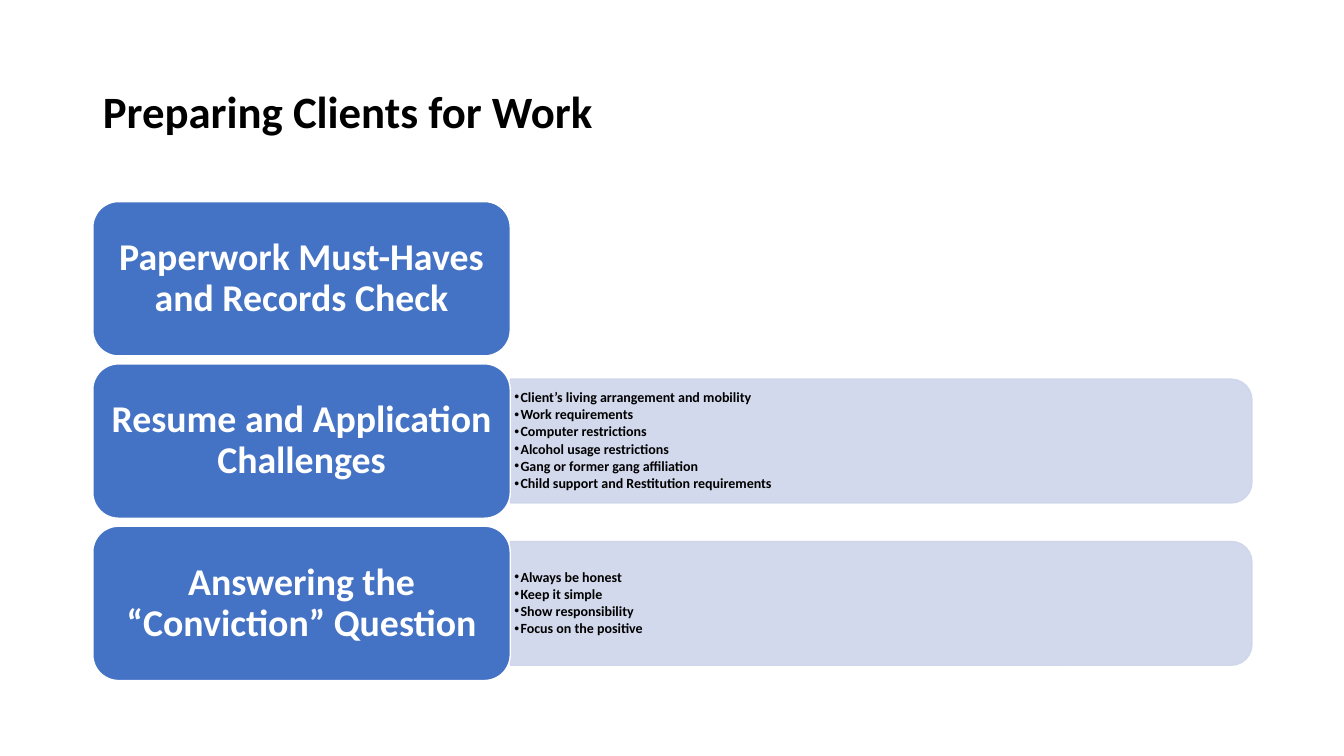
from lxml.etree import SubElement
from pptx import Presentation
from pptx.dml.color import RGBColor
from pptx.enum.shapes import MSO_SHAPE
from pptx.enum.text import MSO_ANCHOR, MSO_AUTO_SIZE, PP_ALIGN
from pptx.oxml.ns import qn
from pptx.util import Cm, Pt

COLORS = {"text": "000000", "card": "4472C4", "band": "CFD5EA", "white": "FFFFFF"}
LEFT, TOP = 2.34, 5.08
CARD_W, CARD_H, PITCH = 10.52, 3.89, 4.09
BAND_W, BAND_H = 18.69, 3.12
LIST_W, LIST_H = 18.54, 2.82

ROWS = [
    ("Paperwork Must-Haves and Records Check", []),
    ("Resume and Application Challenges", [
        "Client’s living arrangement and mobility",
        "Work requirements",
        "Computer restrictions",
        "Alcohol usage restrictions",
        "Gang or former gang affiliation",
        "Child support and Restitution requirements",
    ]),
    ("Answering the “Conviction” Question", [
        "Always be honest",
        "Keep it simple",
        "Show responsibility",
        "Focus on the positive",
    ]),
]


def add_text(p, text, size=10, color="text", align=PP_ALIGN.LEFT, after=0):
    """Write one bold run into a paragraph and format both."""
    p.alignment = align
    p.line_spacing = 0.9
    p.space_before, p.space_after = Pt(0), Pt(after)
    r = p.add_run()
    r.text = text
    r.font.name, r.font.size, r.font.bold = "Calibri", Pt(size), True
    r.font.color.rgb = RGBColor.from_string(COLORS[color])


class SlideBuilder:
    """Hold the style and the current slide."""

    def __init__(self, s, colors):
        """Keep the slide and its palette."""
        self.s, self.colors = s, colors

    def place(self, sp, x, y, w, h):
        """Move and resize a shape, in centimetres."""
        sp.left, sp.top, sp.width, sp.height = Cm(x), Cm(y), Cm(w), Cm(h)

    def frame(self, sp, mx, my):
        """Prepare a wrapped, vertically centred text frame."""
        tf = sp.text_frame
        tf.word_wrap, tf.auto_size = True, MSO_AUTO_SIZE.NONE
        tf.vertical_anchor = MSO_ANCHOR.MIDDLE
        tf.margin_left = tf.margin_right = Cm(mx)
        tf.margin_top = tf.margin_bottom = Cm(my)
        return tf

    def shape(self, kind, x, y, w, h, fill, line):
        """Add a filled and outlined preset shape."""
        sp = self.s.shapes.add_shape(kind, Cm(x), Cm(y), Cm(w), Cm(h))
        sp.shadow.inherit = False
        for fmt, name in ((sp.fill, fill), (sp.line.fill, line)):
            fmt.solid()
            fmt.fore_color.rgb = RGBColor.from_string(self.colors[name])
        sp.line.width = Pt(1)
        return sp

    def title(self, text):
        """Fill the title placeholder."""
        sp = self.s.shapes.title
        self.place(sp, LEFT, 1.02, 29.21, 3.68)
        add_text(self.frame(sp, 0.25, 0.13).paragraphs[0], text, size=32)

    def card(self, text, y):
        """Add a rounded heading card."""
        sp = self.shape(MSO_SHAPE.ROUNDED_RECTANGLE, LEFT, y, CARD_W, CARD_H, "card", "white")
        p = self.frame(sp, 0.28, 0.15).paragraphs[0]
        add_text(p, text, size=27, color="white", align=PP_ALIGN.CENTER)

    def band(self, holder, mid):
        """Add a translucent band, rounded on the right, behind its list."""
        x = LEFT + CARD_W + (BAND_W - BAND_H) / 2
        sp = self.shape(MSO_SHAPE.ROUND_2_SAME_RECTANGLE, x, mid - BAND_W / 2,
                        BAND_H, BAND_W, "band", "band")
        sp.rotation = 90
        for clr in sp.element.spPr.iter(qn("a:srgbClr")):
            SubElement(clr, qn("a:alpha"), val="90000")
        holder.element.addprevious(sp.element)

    def bullets(self, holder, items, mid):
        """Fill a body placeholder with a bulleted list."""
        self.place(holder, LEFT + CARD_W, mid - LIST_H / 2, LIST_W, LIST_H)
        tf = self.frame(holder, 0.1, 0.05)
        for i, item in enumerate(items):
            p = tf.add_paragraph() if i else tf.paragraphs[0]
            p.level = 1
            add_text(p, item, after=1.5)
            pPr = p._p.get_or_add_pPr()
            pPr.set("marL", str(Cm(0.16)))
            pPr.set("indent", str(-Cm(0.16)))
            SubElement(pPr, qn("a:buChar"), char="•")


def main():
    """Build and save the slide."""
    prs = Presentation()
    prs.slide_width, prs.slide_height = Cm(33.87), Cm(19.05)
    s = prs.slides.add_slide(prs.slide_layouts[3])
    b = SlideBuilder(s, COLORS)
    holders = iter([s.placeholders[1], s.placeholders[2]])
    b.title("Preparing Clients for Work")
    for i, (heading, items) in enumerate(ROWS):
        y = TOP + i * PITCH
        mid = y + CARD_H / 2
        if items:
            holder = next(holders)
            b.band(holder, mid)
            b.bullets(holder, items, mid)
        b.card(heading, y)
    prs.save("out.pptx")


if __name__ == "__main__":
    main()
